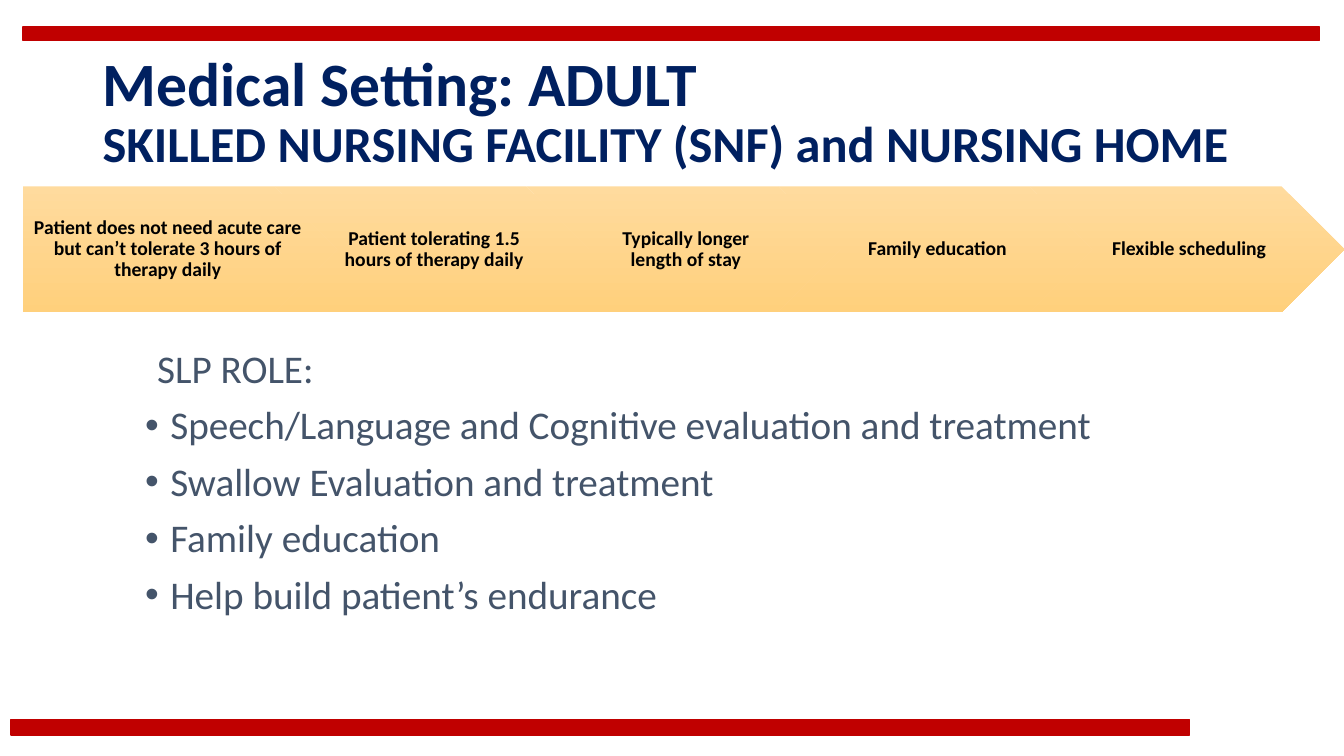
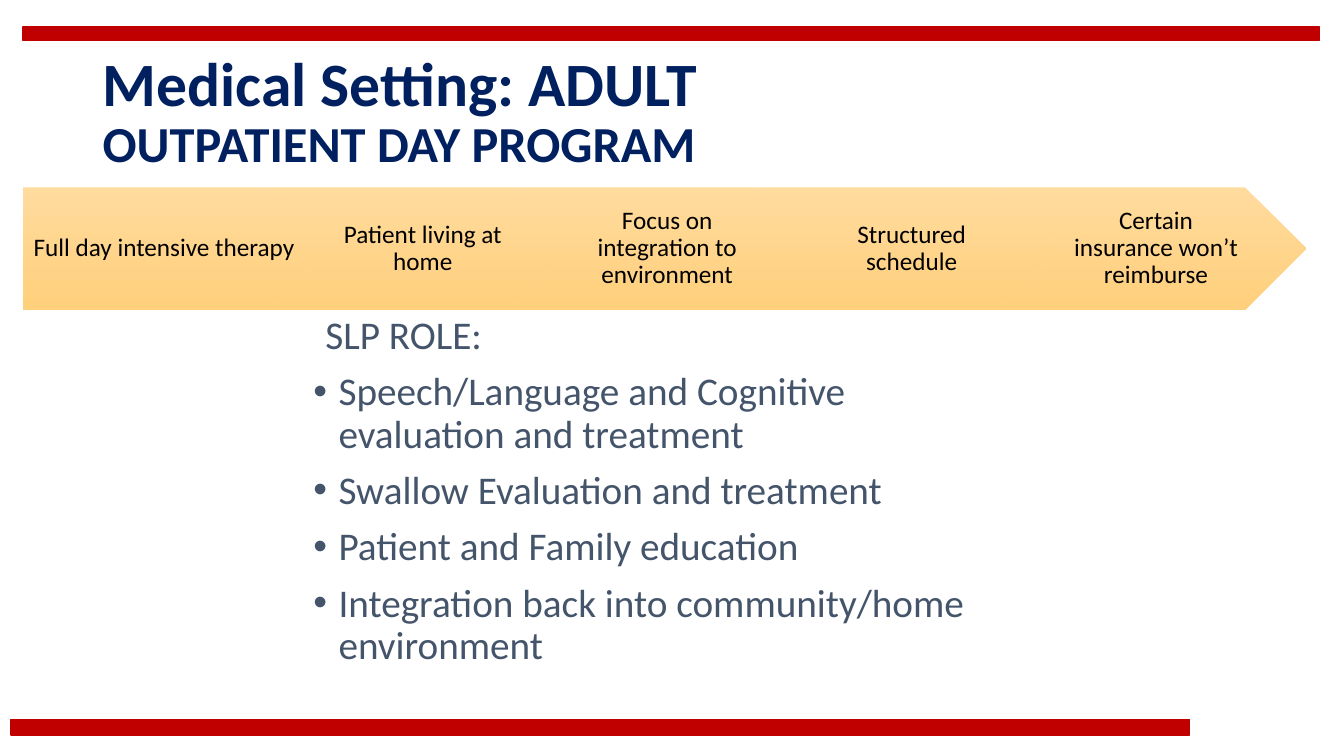
"""Builds two slides on adult medical settings with a process arrow and the SLP role."""
from lxml.etree import SubElement
from pptx import Presentation
from pptx.dml.color import RGBColor
from pptx.enum.shapes import MSO_SHAPE
from pptx.enum.text import MSO_ANCHOR, PP_ALIGN
from pptx.oxml.ns import qn
from pptx.util import Inches, Pt

THEME = {
    "font": "Calibri",
    "band": "C00000", "title": "002060", "body": "44546A", "step": "000000",
    "gradient": ("FFDB9E", "FFD07C"),
    "title_size": 44, "subtitle_size": 36, "body_size": 28,
}
SLIDE_SIZE = (13.33, 7.5)
BANDS = [(0.11, 7.14, 11.69, 0.15), (0.23, 0.27, 12.86, 0.13)]
TITLE_BOX = (0.92, 0.4, 11.5, 1.45)
ARROW_LEFT = 0.23
STEP_PITCH, STEP_RATIO = 0.8, 0.4
HEADING = "Medical Setting: ADULT"
ROLE_HEADING = "SLP ROLE:"

SETTINGS = [
    {
        "subtitle": "SKILLED NURSING FACILITY (SNF) and NURSING HOME",
        "steps": ["Patient does not need acute care but can’t tolerate 3 hours of therapy daily",
                  "Patient tolerating 1.5 hours of therapy daily",
                  "Typically longer length of stay", "Family education", "Flexible scheduling"],
        "step_top": 1.85, "step_width": 3.12, "step_size": 14, "step_bold": True,
        "step_insets": (0.06, 0.04, 0.02, 0.04),
        "roles": ["Speech/Language and Cognitive evaluation and treatment",
                  "Swallow Evaluation and treatment", "Family education",
                  "Help build patient’s endurance"],
        "role_box": (1.34, 3.42, 10.12, 3.39),
    },
    {
        "subtitle": "OUTPATIENT DAY PROGRAM",
        "steps": ["Full day intensive therapy", "Patient living at home",
                  "Focus on integration to environment", "Structured schedule",
                  "Certain insurance won’t reimburse"],
        "step_top": 1.86, "step_width": 3.03, "step_size": 18, "step_bold": False,
        "step_insets": (0.08, 0.05, 0.03, 0.05),
        "roles": ["Speech/Language and Cognitive evaluation and treatment",
                  "Swallow Evaluation and treatment", "Patient and Family education",
                  "Integration back into community/home environment"],
        "role_box": (3.01, 3.08, 6.94, 4.42),
    },
]


def apply(target, values):
    for attribute, value in values.items():
        setattr(target, attribute, value)


def place(box):
    return [Inches(length) for length in box]


def write(paragraph, text, color, size, bold=False):
    run = paragraph.add_run()
    run.text = text
    apply(run.font, {"name": THEME["font"], "size": Pt(size), "bold": bold})
    run.font.color.rgb = RGBColor.from_string(THEME[color])


def add_bands(slide):
    red = RGBColor.from_string(THEME["band"])
    for box in BANDS:
        band = slide.shapes.add_shape(MSO_SHAPE.RECTANGLE, *place(box))
        band.shadow.inherit = False
        band.fill.solid()
        band.fill.fore_color.rgb = band.line.color.rgb = red
        band.line.width = Pt(1)


def add_title(slide, subtitle):
    frame = slide.shapes.add_textbox(*place(TITLE_BOX)).text_frame
    apply(frame, {"word_wrap": True, "vertical_anchor": MSO_ANCHOR.MIDDLE})
    title = frame.paragraphs[0]
    title.line_spacing = 0.9
    write(title, HEADING, "title", THEME["title_size"], True)
    title.add_line_break()
    write(title, subtitle, "title", THEME["subtitle_size"], True)


def add_steps(slide, setting):
    width = setting["step_width"]
    left_inset, *other_insets = setting["step_insets"]
    for index, text in enumerate(setting["steps"]):
        outline = MSO_SHAPE.CHEVRON if index else MSO_SHAPE.PENTAGON
        box = (ARROW_LEFT + index * width * STEP_PITCH, setting["step_top"],
               width, width * STEP_RATIO)
        step = slide.shapes.add_shape(outline, *place(box))
        step.shadow.inherit = False
        step.line.fill.background()
        step.fill.gradient()
        step.fill.gradient_angle = 270
        for stop, color, position in zip(step.fill.gradient_stops, THEME["gradient"], (0, 1)):
            stop.color.rgb = RGBColor.from_string(color)
            stop.position = position
        insets = place((left_inset if index else left_inset + 0.02, *other_insets))
        sides = ("margin_left", "margin_top", "margin_right", "margin_bottom")
        apply(step.text_frame, dict(zip(sides, insets)))
        apply(step.text_frame, {"word_wrap": True, "vertical_anchor": MSO_ANCHOR.MIDDLE})
        label = step.text_frame.paragraphs[0]
        apply(label, {"alignment": PP_ALIGN.CENTER, "line_spacing": 0.9})
        write(label, text, "step", setting["step_size"], setting["step_bold"])


def add_roles(slide, setting):
    frame = slide.shapes.add_textbox(*place(setting["role_box"])).text_frame
    frame.word_wrap = True
    for index, text in enumerate([ROLE_HEADING, *setting["roles"]]):
        role = frame.add_paragraph() if index else frame.paragraphs[0]
        role.line_spacing = 0.9
        margin, indent = (0.25, -0.25) if index else (0.12, 0)
        properties = role._p.get_or_add_pPr()
        properties.set("marL", str(Inches(margin)))
        properties.set("indent", str(Inches(indent)))
        if index:
            role.space_before = Pt(10)
            SubElement(properties, qn("a:buFont")).set("typeface", "Arial")
            SubElement(properties, qn("a:buChar")).set("char", "•")
        write(role, text, "body", THEME["body_size"])


def main():
    deck = Presentation()
    deck.slide_width, deck.slide_height = place(SLIDE_SIZE)
    for setting in SETTINGS:
        slide = deck.slides.add_slide(deck.slide_layouts[6])
        add_bands(slide)
        add_title(slide, setting["subtitle"])
        add_roles(slide, setting)
        add_steps(slide, setting)
    deck.save("out.pptx")


if __name__ == "__main__":
    main()
